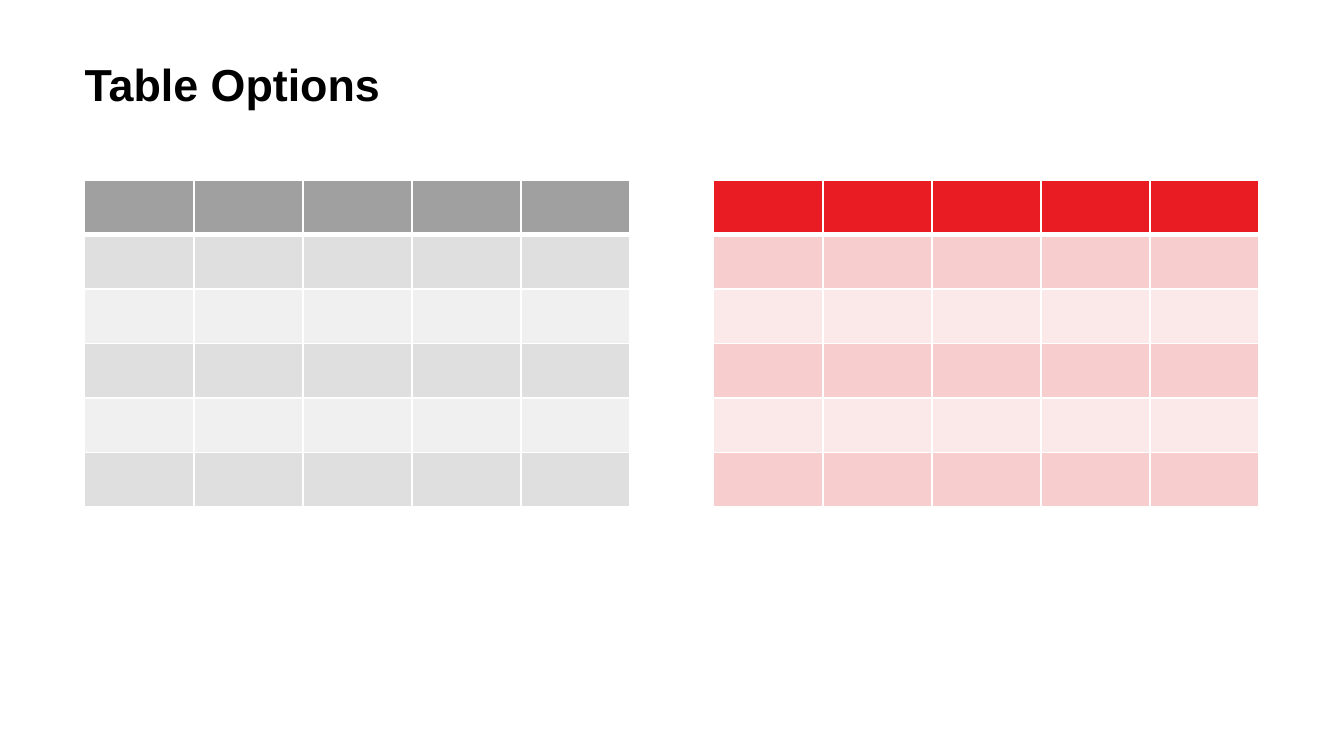
from dataclasses import dataclass

from lxml.etree import SubElement
from pptx import Presentation
from pptx.dml.color import RGBColor
from pptx.enum.text import MSO_ANCHOR, PP_ALIGN
from pptx.oxml.ns import qn
from pptx.slide import Slide
from pptx.table import _Cell as Cell
from pptx.util import Inches, Pt


@dataclass(frozen=True)
class Palette:
    header: str
    odd_row: str
    even_row: str


@dataclass(frozen=True)
class Theme:
    font: str = "Arial"
    title_size: int = 24
    title_color: str = "000000"
    border_color: str = "FFFFFF"
    thin_border: int = 1
    thick_border: int = 3
    gray: Palette = Palette("A0A0A0", "DFDFDF", "F0F0F0")
    red: Palette = Palette("E91C24", "F7CDCD", "FBE8E8")


@dataclass(frozen=True)
class TableOption:
    left: float
    palette: Palette


THEME = Theme()
ROWS, COLUMNS = 6, 5
TABLE_TOP, TABLE_WIDTH, TABLE_HEIGHT = 1.34, 4.06, 2.43
OPTIONS = [TableOption(5.31, THEME.red), TableOption(0.63, THEME.gray)]


def draw_title(slide: Slide, text: str) -> None:
    """Place and format the title placeholder."""
    title = slide.shapes.title
    title.left, title.top = Inches(0.63), Inches(0.47)
    title.width, title.height = Inches(8.75), Inches(0.73)
    frame = title.text_frame
    frame.text = text
    frame.word_wrap = True
    frame.vertical_anchor = MSO_ANCHOR.TOP
    frame.margin_left = frame.margin_right = frame.margin_top = frame.margin_bottom = 0
    para = frame.paragraphs[0]
    para.alignment = PP_ALIGN.LEFT
    para.line_spacing = 0.9
    for span in para.runs:
        span.font.name = THEME.font
        span.font.size = Pt(THEME.title_size)
        span.font.bold = True
        span.font.color.rgb = RGBColor.from_string(THEME.title_color)


def row_color(palette: Palette, index: int) -> str:
    """Return the header colour or the alternating band colour."""
    if index == 0:
        return palette.header
    return palette.odd_row if index % 2 else palette.even_row


def draw_borders(cell: Cell, bottom: int) -> None:
    """Outline a cell with thin lines and the given bottom width in points."""
    properties = cell._tc.get_or_add_tcPr()
    thin = THEME.thin_border
    for edge, width in (("L", thin), ("R", thin), ("T", thin), ("B", bottom)):
        line = SubElement(properties, qn(f"a:ln{edge}"), w=str(Pt(width)))
        fill = SubElement(line, qn("a:solidFill"))
        SubElement(fill, qn("a:srgbClr"), val=THEME.border_color)


def draw_table(slide: Slide, option: TableOption) -> None:
    """Draw an empty table with a header row and alternating bands."""
    table = slide.shapes.add_table(
        ROWS, COLUMNS, Inches(option.left), Inches(TABLE_TOP),
        Inches(TABLE_WIDTH), Inches(TABLE_HEIGHT),
    ).table
    for index, row in enumerate(table.rows):
        color = RGBColor.from_string(row_color(option.palette, index))
        for cell in row.cells:
            if index == 0:
                draw_borders(cell, THEME.thick_border)
            cell.fill.solid()
            cell.fill.fore_color.rgb = color


def main() -> None:
    """Build and save the deck."""
    deck = Presentation()
    deck.slide_width = Inches(10)
    deck.slide_height = deck.slide_width * 9 // 16
    page = deck.slides.add_slide(deck.slide_layouts[5])
    draw_title(page, "Table Options")
    for option in OPTIONS:
        draw_table(page, option)
    deck.save("out.pptx")


if __name__ == "__main__":
    main()
